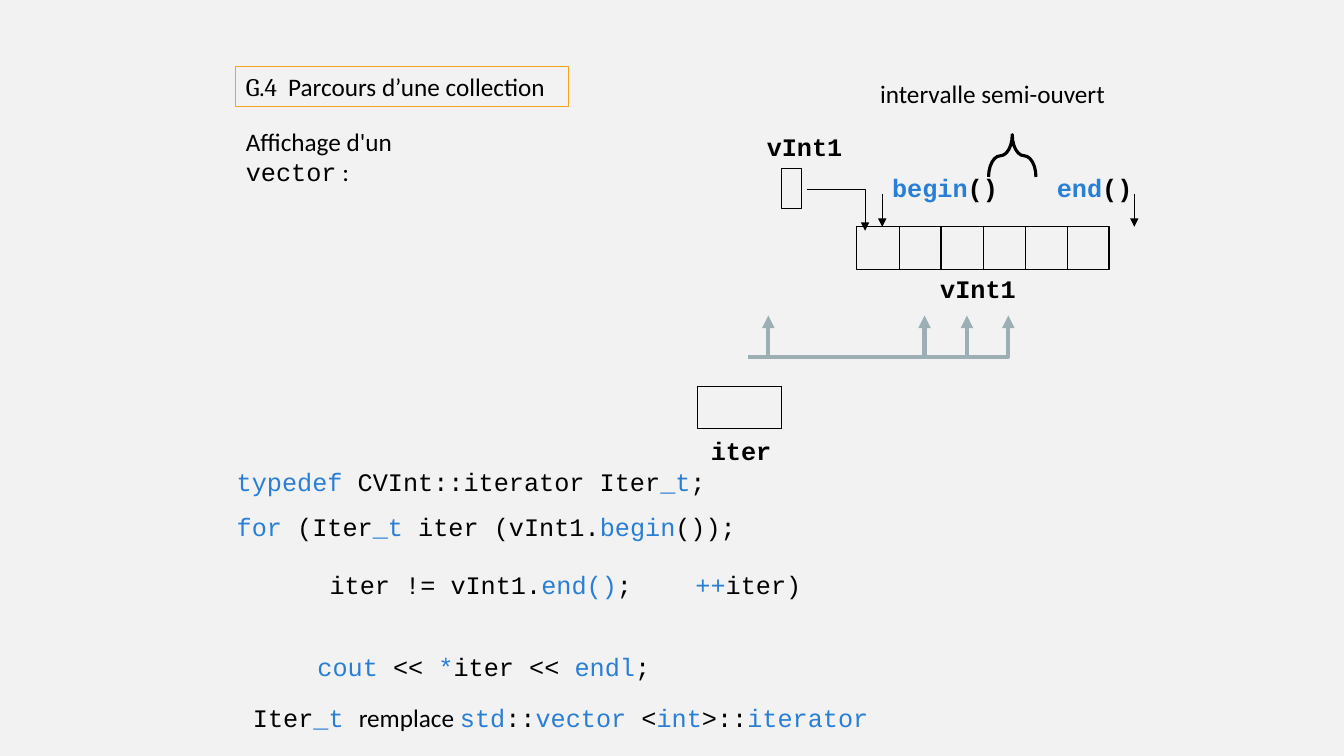
from pptx import Presentation
from pptx import util as u
from pptx.dml.color import RGBColor
from pptx.enum import shapes, text
from pptx.oxml import parse_xml
from pptx.oxml.ns import nsdecls

PX = 9144  # 100 px to the inch
MONO, SANS, SERIF = "Courier New", "Calibri", "Cambria"
INK, BLUE, GREY, GOLD, PAPER = "000000", "297FD5", "9BAFB5", "F6A21D", "F2F2F2"
LEFT, MID, RIGHT = text.PP_ALIGN.LEFT, text.PP_ALIGN.CENTER, text.PP_ALIGN.RIGHT
ROW = 40   # height of a line of text
CELL = 42  # height of a memory cell


def px(*nums):
    return [u.Emu(round(n * PX)) for n in nums]


def color(code):
    return RGBColor.from_string(code)


def stroke(shape, code, size, arrow=False):
    shape.line.color.rgb = color(code)
    shape.line.width = u.Pt(size)
    if arrow:
        tip = f'<a:tailEnd {nsdecls("a")} type="triangle"/>'
        shape.line._get_or_add_ln().append(parse_xml(tip))


def write(shape, runs, align=LEFT, bold=False, indent=0, top=False):
    """Each run is (words, colour, font); None breaks the line."""
    frame = shape.text_frame
    frame.word_wrap = False
    frame.auto_size = text.MSO_AUTO_SIZE.SHAPE_TO_FIT_TEXT
    frame.vertical_anchor = text.MSO_ANCHOR.TOP if top else text.MSO_ANCHOR.MIDDLE
    para = frame.paragraphs[0]
    para.alignment = align
    if indent:
        para._p.get_or_add_pPr().set("marL", str(indent * PX))
    for item in runs:
        if item is None:
            para.add_line_break()
            continue
        words, code, font = item
        run = para.add_run()
        run.text = words
        run.font.size = u.Pt(18)
        run.font.name = font
        run.font.bold = bold
        run.font.color.rgb = color(code)


def label(slide, x, y, w, runs, **style):
    write(slide.shapes.add_textbox(*px(x, y, w, ROW)), runs, **style)


def code(*parts):
    """Colour pieces of code: those marked with a leading ~ are blue."""
    return [(p[1:], BLUE, MONO) if p[0] == "~" else (p, INK, MONO) for p in parts]


def frame(slide, x, y, w, h, kind=shapes.MSO_SHAPE.RECTANGLE, ink=INK, size=0.75):
    shape = slide.shapes.add_shape(kind, *px(x, y, w, h))
    shape.shadow.inherit = False
    shape.fill.background()
    stroke(shape, ink, size)
    return shape


def rule(slide, x, y, end, arrow=False):
    line = slide.shapes.add_connector(shapes.MSO_CONNECTOR.STRAIGHT, *px(x, y, x, end))
    line._element.spPr.append(parse_xml(f'<a:effectLst {nsdecls("a")}/>'))
    stroke(line, INK, 0.75, arrow)


def elbow(slide, start, turn, end, ink, size):
    build = slide.shapes.build_freeform(*start, scale=PX)
    build.add_line_segments([turn, end], close=False)
    shape = build.convert_to_shape()
    shape.shadow.inherit = False
    shape.fill.background()
    stroke(shape, ink, size, arrow=True)


def heading(slide, x, y, w):
    title = frame(slide, x, y, w, ROW, ink=GOLD)
    write(title, [("G.4 ", INK, SERIF), (" Parcours d’une collection", INK, SANS)])
    label(slide, x, y + 69, 272,
          [("Affichage d'un ", INK, SANS), None,
           ("vector", INK, MONO), (" :", INK, SANS)])


def bounds(slide, x, y):
    # Half-open interval with its brace
    label(slide, x - 12, y, 252, [("intervalle semi-ouvert", INK, SANS)], top=True)
    brace = frame(slide, x + 108, y + 58, 42, 47, shapes.MSO_SHAPE.RIGHT_BRACE, size=2.25)
    brace.rotation = 270
    brace.adjustments[0], brace.adjustments[1] = 0.517, 0.5
    # Arrows to the first cell and past the last
    for name, left, wide, align, tip in (("~begin", 0, 126, LEFT, 0),
                                         ("~end", 162, 96, RIGHT, 250)):
        rule(slide, x + tip, y + 119, y + 152, arrow=True)
        label(slide, x + left, y + 93, wide, code(name, "()"), align=align, bold=True)


def vector(slide, x, y, w, count):
    # Row of cells
    frame(slide, x, y, w, CELL)
    for i in range(1, count):
        rule(slide, x + w * i / count, y, y + CELL)
    label(slide, x + 72, y + 41, 96, code("vInt1"), align=MID, bold=True)
    # Variable that points to it
    label(slide, x - 100, y - 100, 96, code("vInt1"), align=MID, bold=True)
    frame(slide, x - 75, y - 58, 20, 40)
    elbow(slide, (x - 50, y - 37), (x + 8, y - 37), (x + 8, y + 4), INK, 0.75)


def cursor(slide, x, y, w):
    # Iterator and the cells it visits
    for reach in (20, 175, 217, 258):
        tip = x + 50 + reach
        elbow(slide, (x + 50, y - 29), (tip, y - 29), (tip, y - 70), GREY, 3)
    frame(slide, x, y, w, CELL)
    rule(slide, x + w, y, y + CELL)
    label(slide, x + 3, y + 44, 80, code("iter"), align=MID, bold=True)


def listing(slide, x, y):
    lines = (
        (0, 0, 490, 0, ("~typedef ", "CVInt::iterator Iter", "~_t", ";")),
        (0, 44, 520, 0, ("~for", " (Iter", "~_t ", "iter (vInt1.", "~begin", "());")),
        (17, 102, 397, 75, ("iter != vInt1.", "~end()", ";")),
        (455, 102, 126, 0, ("~++", "iter)")),
        (80, 183, 367, 0, ("~cout", " << ", "~*", "iter << ", "~endl", ";")),
    )
    for left, top, wide, indent, parts in lines:
        label(slide, x + left, y + top, wide, code(*parts), indent=indent)


def note(slide, x, y, w):
    runs = code("Iter", "~_t ") + [("remplace ", INK, SANS)]
    runs += code("~std", "::", "~vector ", "<", "~int", ">::", "~iterator")
    label(slide, x, y, w, runs, align=MID, top=True)


def main():
    deck = Presentation()
    deck.slide_width, deck.slide_height = px(1333, 750)
    slide = deck.slides.add_slide(deck.slide_layouts[6])
    slide.background.fill.solid()
    slide.background.fill.fore_color.rgb = color(PAPER)
    heading(slide, 234, 66, 330)
    bounds(slide, 875, 73)
    vector(slide, 850, 225, 250, 6)
    cursor(slide, 692, 383, 83)
    listing(slide, 225, 458)
    note(slide, 234, 692, 644)
    deck.save("out.pptx")


if __name__ == "__main__":
    main()
